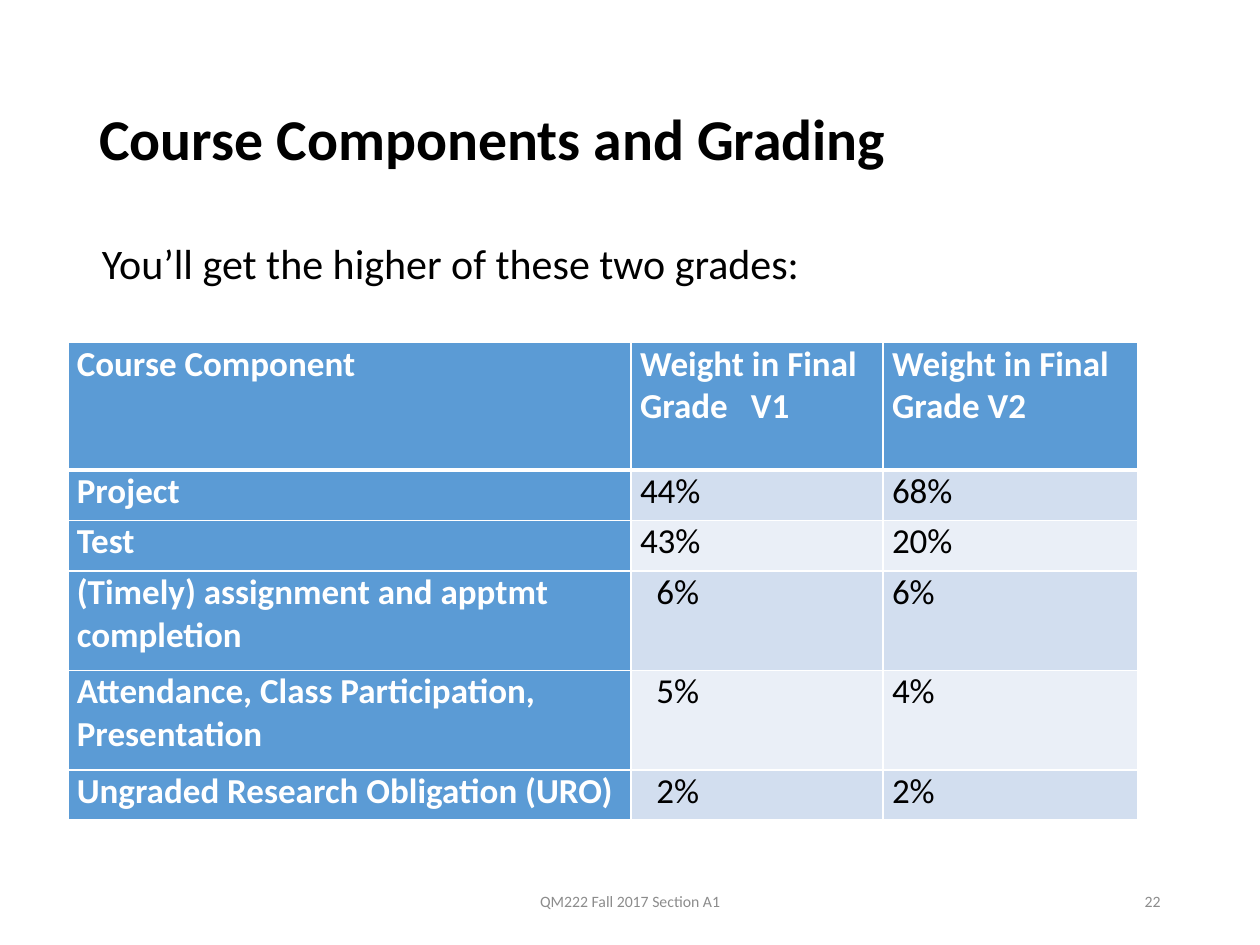
from dataclasses import dataclass

from lxml.etree import SubElement
from pptx import Presentation
from pptx.dml.color import RGBColor as RGB
from pptx.enum.text import MSO_ANCHOR as Anchor, PP_ALIGN as Align
from pptx.oxml.ns import qn
from pptx.util import Inches, Pt


@dataclass(frozen=True)
class Theme:
    font: str = "Calibri"
    ink: str = "000000"
    paper: str = "FFFFFF"
    muted: str = "8C8C8C"
    accent: str = "5B9BD5"
    bands: tuple = ("D2DEEF", "EAEFF7")
    title: int = 33
    body: int = 24
    cell: int = 20
    footer: int = 9


THEME = Theme()
HEADERS = ["Course Component", "Weight in Final Grade\tV1", "Weight in Final Grade V2"]
GRADES = [
    ("Project", "44%", "68%"),
    ("Test", "43%", "20%"),
    ("(Timely) assignment and apptmt completion", "6%", "6%"),
    ("Attendance, Class Participation, Presentation", "5%", "4%"),
    ("Ungraded Research Obligation (URO)", "2%", "2%"),
]
COL_WIDTHS = [4.47, 2, 2.02]
ROW_HEIGHTS = [1.01, 0.4, 0.4, 0.79, 0.79, 0.4]
CELL_INSET = 0.07
DIGIT_INDENT = 0.13
VERSION_TAB = 0.88


def style_font(p, size, color, bold=False):
    p.font.name = THEME.font
    p.font.size = Pt(size)
    p.font.bold = bold
    p.font.color.rgb = RGB.from_string(color)


def add_text(slide, box, text, size, color, bold=False, align=Align.LEFT,
             anchor=Anchor.MIDDLE, line_spacing=1.0):
    tf = slide.shapes.add_textbox(*map(Inches, box)).text_frame
    tf.word_wrap = True
    tf.vertical_anchor = anchor
    p = tf.paragraphs[0]
    p.text = text
    p.alignment = align
    p.line_spacing = line_spacing
    style_font(p, size, color, bold)
    return p


def add_heading(slide, box):
    add_text(slide, box, "Course Components and Grading", THEME.title, THEME.ink,
             bold=True, line_spacing=0.9)


def add_intro(slide, box):
    p = add_text(slide, box, "You’ll get the higher of these two grades:",
                 THEME.body, THEME.ink, anchor=Anchor.TOP, line_spacing=0.9)
    p.space_before = Pt(7.5)


def set_borders(cell, is_header):
    tc_pr = cell._tc.get_or_add_tcPr()
    for side in "LRTB":
        width = 3 if is_header and side == "B" else 1
        ln = SubElement(tc_pr, qn(f"a:ln{side}"), w=str(Pt(width)))
        fill = SubElement(ln, qn("a:solidFill"))
        SubElement(fill, qn("a:srgbClr"), val=THEME.paper)


def add_tab_stop(p, position):
    tabs = SubElement(p._p.get_or_add_pPr(), qn("a:tabLst"))
    SubElement(tabs, qn("a:tab"), pos=str(Inches(position)), algn="l")


def fill_cell(cell, text, row, col):
    is_label = row == 0 or col == 0
    is_single_digit = row > 0 and col == 1 and len(text) == 2
    cell.margin_left = Inches(CELL_INSET + DIGIT_INDENT * is_single_digit)
    cell.margin_right = Inches(CELL_INSET)
    cell.margin_top = cell.margin_bottom = 0
    set_borders(cell, row == 0)
    cell.fill.solid()
    color = THEME.accent if is_label else THEME.bands[(row - 1) % 2]
    cell.fill.fore_color.rgb = RGB.from_string(color)
    p = cell.text_frame.paragraphs[0]
    p.text = text
    style_font(p, THEME.cell, THEME.paper if is_label else THEME.ink, is_label)
    if "\t" in text:
        add_tab_stop(p, VERSION_TAB)


def add_grade_table(slide, box):
    rows = [HEADERS, *GRADES]
    table = slide.shapes.add_table(len(rows), len(HEADERS), *map(Inches, box)).table
    table.horz_banding = False
    table.first_col = True
    for column, width in zip(table.columns, COL_WIDTHS):
        column.width = Inches(width)
    for row, height in zip(table.rows, ROW_HEIGHTS):
        row.height = Inches(height)
    for r, texts in enumerate(rows):
        for c, text in enumerate(texts):
            fill_cell(table.cell(r, c), text, r, c)


def add_footer(slide, box):
    left, top, width, height = box
    number_width = 2.25
    add_text(slide, box, "QM222 Fall 2017 Section A1", THEME.footer, THEME.muted,
             align=Align.CENTER)
    number_box = (left + width - number_width, top, number_width, height)
    add_text(slide, number_box, "22", THEME.footer, THEME.muted, align=Align.RIGHT)


def main():
    prs = Presentation()
    prs.slide_width, prs.slide_height = Inches(10), Inches(7.5)
    slide = prs.slides.add_slide(prs.slide_layouts[6])
    add_heading(slide, (0.69, 0.4, 8.62, 1.45))
    add_intro(slide, (0.71, 1.88, 8.32, 0.69))
    add_grade_table(slide, (0.54, 2.72, sum(COL_WIDTHS), sum(ROW_HEIGHTS)))
    add_footer(slide, (0.69, 6.95, 8.62, 0.4))
    prs.save("out.pptx")


if __name__ == "__main__":
    main()
